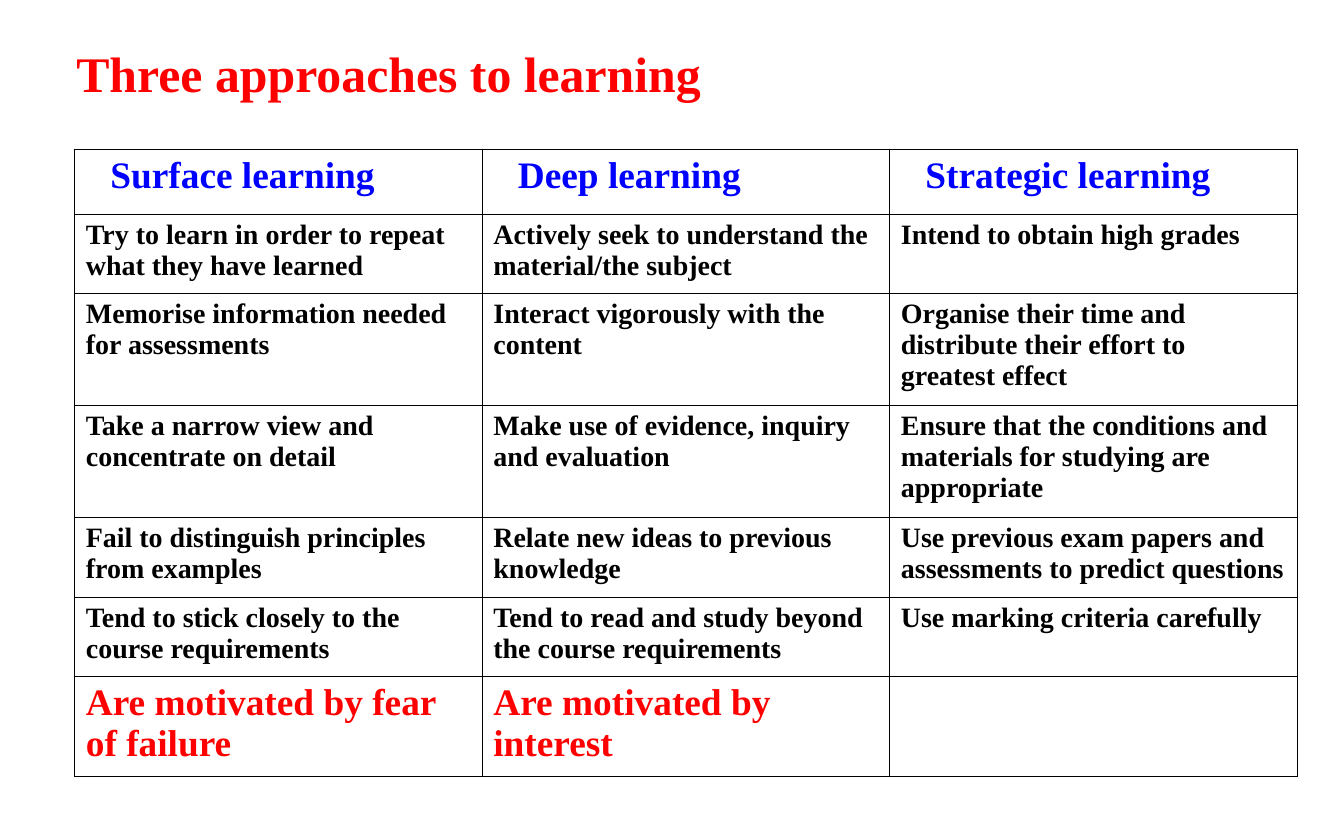
from lxml.etree import SubElement
from pptx import Presentation
from pptx.dml.color import RGBColor as Rgb
from pptx.oxml.ns import qn
from pptx.util import Pt

COLORS = {"title": "FF0000", "heading": "0000FF", "body": "000000",
          "motive": "FF0000", "border": "000000"}
FONT = "Times New Roman"
COLUMN_WIDTH = 262
ROW_HEIGHTS = [41.8, 50.8, 72, 72, 51.4, 50.8, 64.3]
APPROACHES = [
    ["Surface learning", "Deep learning", "Strategic learning"],
    ["Try to learn in order to repeat what they have learned",
     "Actively seek to understand the\nmaterial/the subject",
     "Intend to obtain high grades"],
    ["Memorise information needed for assessments",
     "Interact vigorously with the content",
     "Organise their time and distribute their effort to greatest effect"],
    ["Take a narrow view and concentrate on detail",
     "Make use of evidence, inquiry and evaluation",
     "Ensure that the conditions and materials for studying are appropriate"],
    ["Fail to distinguish principles from examples",
     "Relate new ideas to previous knowledge",
     "Use previous exam papers and assessments to predict questions"],
    ["Tend to stick closely to the course requirements",
     "Tend to read and study beyond the course requirements",
     "Use marking criteria carefully"],
    ["Are motivated by fear of failure", "Are motivated by interest", ""],
]


def write(frame, text, size, color):
    frame.text = text
    frame.word_wrap = True
    for paragraph in frame.paragraphs:
        for run in paragraph.runs:
            run.font.name = FONT
            run.font.size = Pt(size)
            run.font.bold = True
            run.font.color.rgb = Rgb.from_string(COLORS[color])


def add_borders(cell):
    properties = cell._tc.get_or_add_tcPr()
    for side in ("a:lnL", "a:lnR", "a:lnT", "a:lnB"):
        line = SubElement(properties, qn(side), w=str(Pt(1)))
        fill = SubElement(line, qn("a:solidFill"))
        SubElement(fill, qn("a:srgbClr"), val=COLORS["border"])


def add_title(slide, text):
    title = slide.shapes.add_textbox(Pt(42), Pt(24), Pt(786), Pt(46))
    write(title.text_frame, text, 32, "title")


def add_comparison(slide, rows):
    columns = len(rows[0])
    table = slide.shapes.add_table(
        len(rows), columns, Pt(48), Pt(96),
        Pt(COLUMN_WIDTH * columns), Pt(sum(ROW_HEIGHTS))).table
    table.first_row = table.horz_banding = False
    for column in table.columns:
        column.width = Pt(COLUMN_WIDTH)
    styles = [(24, "heading")] + [(18, "body")] * (len(rows) - 2) + [(24, "motive")]
    for row, height, texts, (size, color) in zip(table.rows, ROW_HEIGHTS, rows, styles):
        row.height = Pt(height)
        for cell, text in zip(row.cells, texts):
            write(cell.text_frame, text, size, color)
            if color == "heading":
                cell.margin_left = Pt(23)
            add_borders(cell)
            cell.fill.background()


def main():
    deck = Presentation()
    deck.slide_width, deck.slide_height = Pt(864), Pt(540)
    slide = deck.slides.add_slide(deck.slide_layouts[6])
    add_comparison(slide, APPROACHES)
    add_title(slide, "Three approaches to learning")
    deck.save("out.pptx")


if __name__ == "__main__":
    main()
